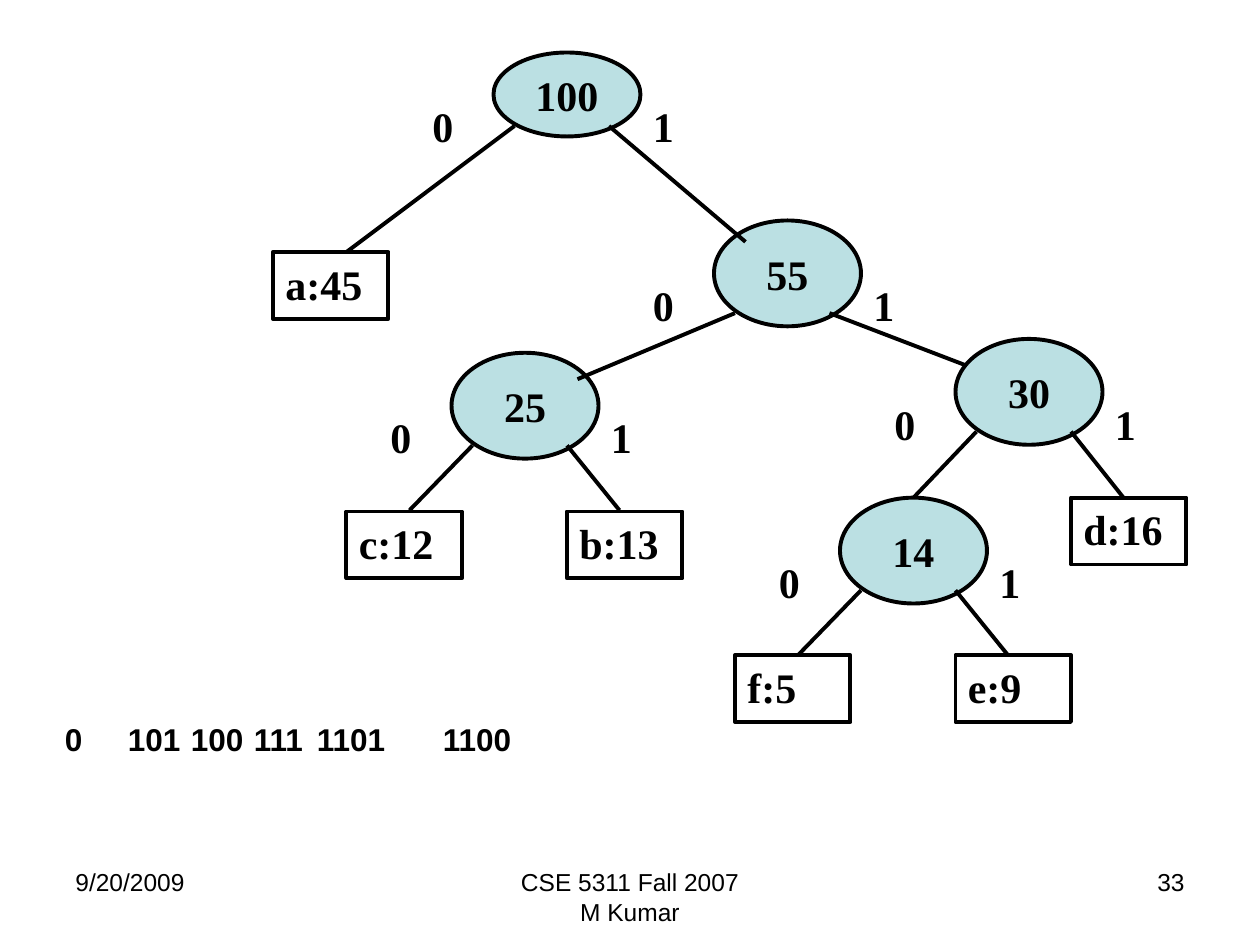
from pptx import Presentation
from pptx.util import Pt
from pptx.dml.color import RGBColor
from pptx.enum.shapes import MSO_SHAPE, MSO_CONNECTOR
from pptx.enum.text import PP_ALIGN, MSO_ANCHOR
from pptx.oxml.ns import qn
from lxml import etree

COLORS = {"ink": "000000", "paper": "FFFFFF", "node": "BBE0E3"}
NODE_W = 84
LEAF_W, LEAF_H = 66, 38.2
BIT_W = 30

# weight, left, top, height, ends of the 0 and 1 edges
NODES = [
    ("25", 258, 201.6, 60.5, (234, 291.6), (354, 291.6)),
    ("14", 480, 284.4, 60.5, (456, 374.4), (576, 374.4)),
    ("30", 546, 193.7, 60.5, (522, 284.4), (642, 284.4)),
    ("55", 408, 126, 60.5, (330, 216.7), (552, 208.8)),
    ("100", 282, 30, 48, (198, 144), (426, 138.2)),
]
LEAVES = [
    ("c:12", 198, 292.3), ("b:13", 324, 292.3),
    ("f:5", 420, 374.4), ("e:9", 546, 374.4),
    ("d:16", 612, 284.4), ("a:45", 156, 144),
]
CODES = ["0", "101", "100", "111", "1101", "1100"]
FOOTERS = [
    (["9/20/2009"], 36, 168, PP_ALIGN.LEFT),
    (["CSE 5311 Fall 2007", "M Kumar"], 246, 228, PP_ALIGN.CENTER),
    (["33"], 516, 168, PP_ALIGN.RIGHT),
]


def rgb(name):
    return RGBColor.from_string(COLORS[name])


class TreeSlide:
    serif, sans = "Times New Roman", "Arial"
    line_width = 2.25

    def __init__(self, slide):
        self.s = slide

    def add_lines(self, tf, lines, font, size, bold, align=PP_ALIGN.LEFT):
        for i, line in enumerate(lines):
            p = tf.add_paragraph() if i else tf.paragraphs[0]
            p.alignment = align
            r = p.add_run()
            r.text = line
            r.font.name, r.font.size, r.font.bold = font, Pt(size), bold
            r.font.color.rgb = rgb("ink")

    def shape(self, kind, text, x, y, w, h, line="ink", fill=None):
        sp = self.s.shapes.add_shape(kind, Pt(x), Pt(y), Pt(w), Pt(h))
        sp.shadow.inherit = False
        if fill:
            sp.fill.solid()
            sp.fill.fore_color.rgb = rgb(fill)
        else:
            sp.fill.background()
        sp.line.color.rgb = rgb(line)
        sp.line.width = Pt(self.line_width)
        tf = sp.text_frame
        oval = kind == MSO_SHAPE.OVAL
        tf.word_wrap = not oval
        tf.vertical_anchor = MSO_ANCHOR.MIDDLE if oval else MSO_ANCHOR.TOP
        align = PP_ALIGN.CENTER if oval else PP_ALIGN.LEFT
        self.add_lines(tf, [text], self.serif, 24, True, align)

    def edge(self, start, end):
        cx = self.s.shapes.add_connector(
            MSO_CONNECTOR.STRAIGHT, *(Pt(v) for v in (*start, *end)))
        cx.line.color.rgb = rgb("ink")
        cx.line.width = Pt(self.line_width)
        etree.SubElement(cx._element.spPr, qn("a:effectLst"))

    def leaf(self, text, x, y):
        self.shape(MSO_SHAPE.RECTANGLE, text, x, y, LEAF_W, LEAF_H)

    def node(self, text, x, y, h, zero_end, one_end):
        """Draw an inner node with its two bit labels and edges."""
        for bit, bit_x in (("1", x + NODE_W), ("0", x - BIT_W - 12)):
            self.shape(MSO_SHAPE.RECTANGLE, bit, bit_x, y + h / 2,
                       BIT_W, LEAF_H, line="paper")
        self.shape(MSO_SHAPE.OVAL, text, x, y, NODE_W, h, fill="node")
        edge_y = y + h * 7 / 8
        self.edge((x + 12, edge_y), zero_end)
        self.edge((x + 66, edge_y), one_end)

    def label(self, lines, x, y, w, h, size, bold=False,
              align=PP_ALIGN.LEFT, wrap=True):
        tf = self.s.shapes.add_textbox(Pt(x), Pt(y), Pt(w), Pt(h)).text_frame
        tf.word_wrap = wrap
        self.add_lines(tf, lines, self.sans, size, bold, align)


def main():
    prs = Presentation()
    prs.slide_width, prs.slide_height = Pt(720), Pt(540)
    tree = TreeSlide(prs.slides.add_slide(prs.slide_layouts[6]))
    for lines, x, w, align in FOOTERS:
        tree.label(lines, x, 492, w, 37.5, 14, align=align)
    for node in NODES:
        tree.node(*node)
    for leaf in LEAVES:
        tree.leaf(*leaf)
    tree.label(["\t".join(CODES)], 30, 408, 445, 29, 18, bold=True, wrap=False)
    prs.save("out.pptx")


if __name__ == "__main__":
    main()
